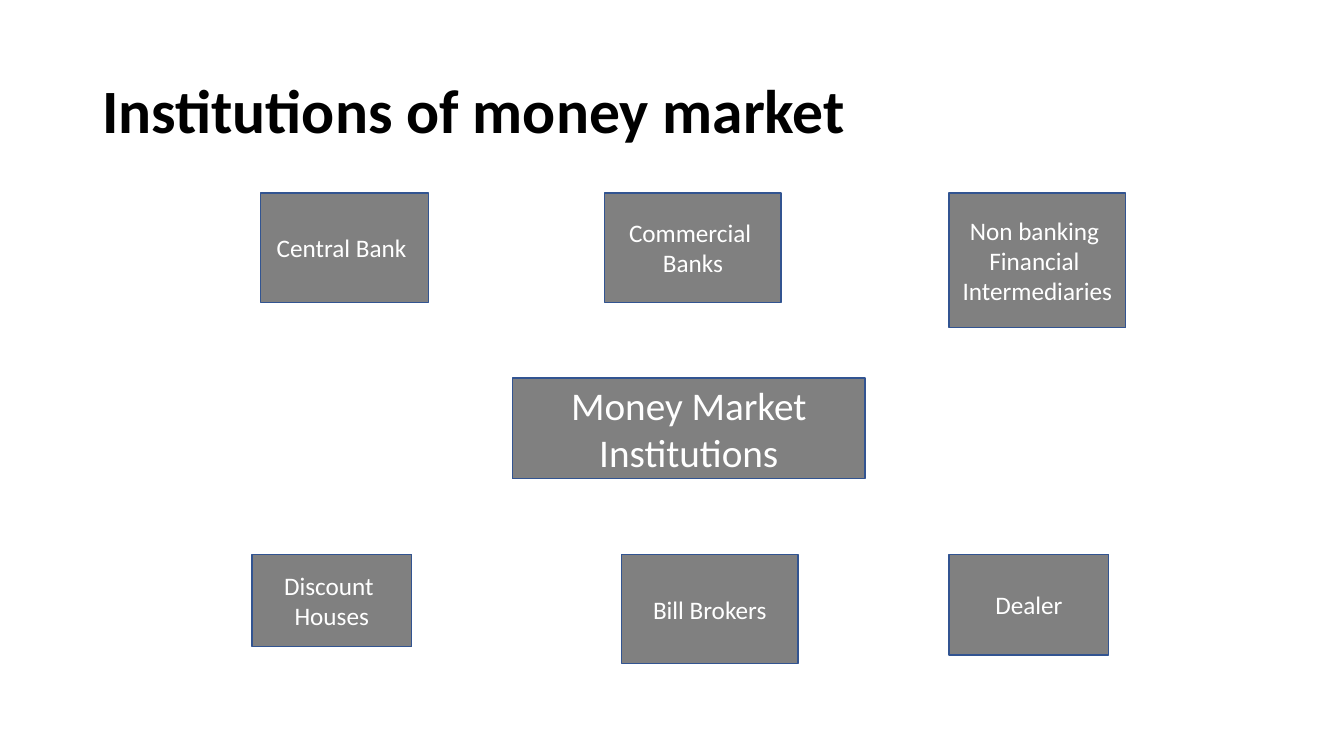
from pptx import Presentation
from pptx.dml.color import RGBColor
from pptx.enum.shapes import MSO_SHAPE as SHAPE
from pptx.enum.text import MSO_ANCHOR as ANCHOR, PP_ALIGN as ALIGN
from pptx.util import Pt

TITLE = "Institutions of money market"
HUB = (366, 270, 252, 72, ["Money Market Institutions"])

# Each row: top, then (left, width, height, lines) of its boxes
ROWS = [
    (138, [
        (186, 120, 78, ["Central Bank "]),
        (432, 126, 78, ["Commercial ", "Banks"]),
        (678, 126, 96, ["Non banking ", "Financial ", "Intermediaries"]),
    ]),
    (396, [
        (180, 114, 66, ["Discount ", "Houses"]),
        (444, 126, 78, ["Bill Brokers"]),
        (678, 114, 72, ["Dealer"]),
    ]),
]

THEME = {
    "font": "Calibri",
    "title": RGBColor(0x00, 0x00, 0x00),
    "text": RGBColor(0xFF, 0xFF, 0xFF),
    "fill": RGBColor(0x80, 0x80, 0x80),
    "line": RGBColor(0x32, 0x54, 0x91),
    "title_size": 44,
    "hub_size": 28,
    "box_size": 18,
}


def write_lines(tf, lines, size, color, align, bold=False):
    """Fill a text frame with one paragraph per line, centred vertically."""
    tf.word_wrap = True
    tf.vertical_anchor = ANCHOR.MIDDLE
    for i, line in enumerate(lines):
        p = tf.add_paragraph() if i else tf.paragraphs[0]
        p.alignment = align
        r = p.add_run()
        r.text = line
        r.font.name = THEME["font"]
        r.font.size = Pt(size)
        r.font.bold = bold
        r.font.color.rgb = color


def add_title(s):
    box = s.shapes.add_textbox(Pt(66), Pt(28.8), Pt(828), Pt(104.4))
    write_lines(box.text_frame, [TITLE], THEME["title_size"], THEME["title"],
                ALIGN.LEFT, bold=True)
    box.text_frame.paragraphs[0].line_spacing = 0.9


def add_box(s, left, top, width, height, lines, size):
    sp = s.shapes.add_shape(SHAPE.FLOWCHART_PROCESS,
                            Pt(left), Pt(top), Pt(width), Pt(height))
    sp.shadow.inherit = False
    sp.fill.solid()
    sp.fill.fore_color.rgb = THEME["fill"]
    sp.line.color.rgb = THEME["line"]
    sp.line.width = Pt(1)
    write_lines(sp.text_frame, lines, size, THEME["text"], ALIGN.CENTER)


def main():
    prs = Presentation()
    prs.slide_width, prs.slide_height = Pt(960), Pt(540)
    s = prs.slides.add_slide(prs.slide_layouts[6])
    add_title(s)
    add_box(s, *HUB, THEME["hub_size"])
    for top, boxes in ROWS:
        for left, width, height, lines in boxes:
            add_box(s, left, top, width, height, lines, THEME["box_size"])
    prs.save("out.pptx")


if __name__ == "__main__":
    main()
